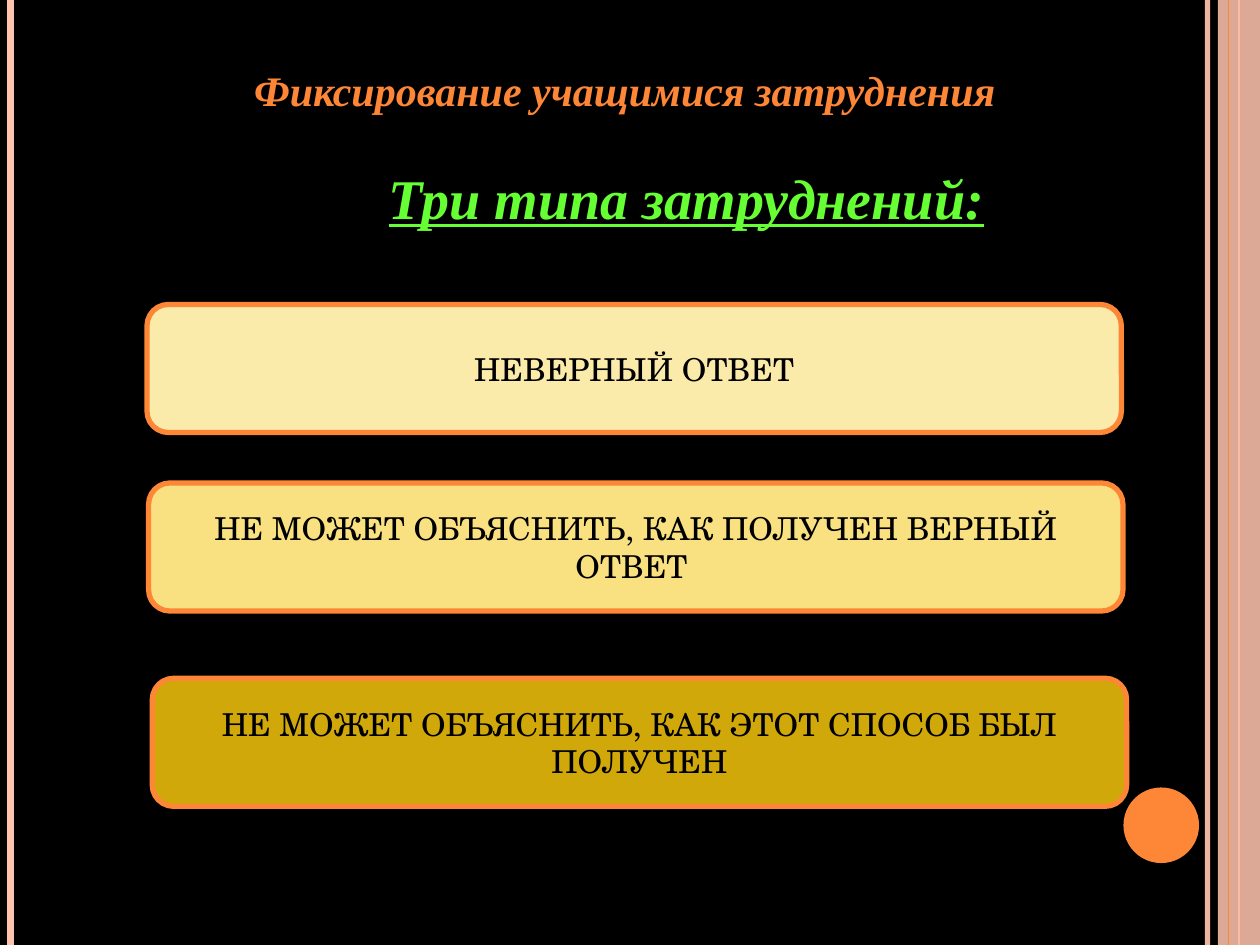
"""Build a slide that names three types of pupils' difficulties."""
import dataclasses

import lxml.etree
import pptx
import pptx.dml.color
import pptx.enum.shapes
import pptx.enum.text
import pptx.oxml.ns
import pptx.util


@dataclasses.dataclass(frozen=True)
class Theme:
    background: str = "000000"
    ink: str = "000000"
    accent: str = "FE8637"
    blush: str = "FEC3AE"
    green: str = "66FF33"
    answers: tuple = ("FBEBAB", "F9E181", "D0A80A")
    heading_font: str = "Times New Roman"
    answer_font: str = "TeX Gyre Schola"
    title_size: int = 24
    subtitle_size: int = 32
    answer_size: int = 18
    border: float = 3


class Board:
    columns, rows = 120, 90

    def __init__(self, deck, theme):
        self.theme = theme
        self.column = deck.slide_width / self.columns
        self.row = deck.slide_height / self.rows
        self.page = deck.slides.add_slide(deck.slide_layouts[6])
        self.paint(self.page.background.fill, theme.background)

    def grid(self, left, top, width, height):
        return (round(left * self.column), round(top * self.row),
                round(width * self.column), round(height * self.row))

    def paint(self, fill, color, opacity=100):
        fill.solid()
        fill.fore_color.rgb = pptx.dml.color.RGBColor.from_string(color)
        if opacity < 100:
            node = fill._xPr.find(".//" + pptx.oxml.ns.qn("a:srgbClr"))
            alpha = lxml.etree.SubElement(node, pptx.oxml.ns.qn("a:alpha"))
            alpha.set("val", str(opacity * 1000))

    def stripe(self, column, color, width, opacity=100):
        left, top, right, bottom = self.grid(column, 0, column, self.rows)
        line = self.page.shapes.add_connector(
            pptx.enum.shapes.MSO_CONNECTOR.STRAIGHT, left, top, right, bottom)
        line.line.width = pptx.util.Pt(width)
        self.paint(line.line.fill, color, opacity)
        lxml.etree.SubElement(line._element.spPr, pptx.oxml.ns.qn("a:effectLst"))

    def shape(self, kind, area, color, opacity=100):
        shape = self.page.shapes.add_shape(kind, *self.grid(*area))
        shape.shadow.inherit = False
        self.paint(shape.fill, color, opacity)
        shape.line.fill.background()
        return shape

    def label(self, box, text, font, size, color, emphasis=False, underline=False):
        box.text_frame.text = text
        para = box.text_frame.paragraphs[0]
        para.alignment = pptx.enum.text.PP_ALIGN.CENTER
        for span in para.runs:
            span.font.name = font
            span.font.size = pptx.util.Pt(size)
            span.font.bold = span.font.italic = emphasis
            span.font.underline = underline
            self.paint(span.font.fill, color)

    def heading(self, area, text, size, color, wrap=True, underline=False):
        box = self.page.shapes.add_textbox(*self.grid(*area))
        box.text_frame.word_wrap = wrap
        box.text_frame.auto_size = pptx.enum.text.MSO_AUTO_SIZE.SHAPE_TO_FIT_TEXT
        self.label(box, text, self.theme.heading_font, size, color, True, underline)

    def answer(self, left, top, text, color):
        box = self.shape(pptx.enum.shapes.MSO_SHAPE.ROUNDED_RECTANGLE,
                         (left, top, 92.8, 12.2), color)
        self.paint(box.line.fill, self.theme.accent)
        box.line.width = pptx.util.Pt(self.theme.border)
        box.text_frame.word_wrap = True
        box.text_frame.vertical_anchor = pptx.enum.text.MSO_ANCHOR.MIDDLE
        self.label(box, text, self.theme.answer_font, self.theme.answer_size,
                   self.theme.ink)


def main():
    deck = pptx.Presentation()
    deck.slide_width, deck.slide_height = pptx.util.Inches(10), pptx.util.Inches(7.5)
    theme = Theme()
    board = Board(deck, theme)
    shapes = pptx.enum.shapes.MSO_SHAPE

    board.stripe(115, theme.blush, 3, 93)
    board.stripe(1, theme.blush, 4.5)
    board.stripe(118, theme.accent, 1.5)
    board.shape(shapes.RECTANGLE, (116, 0, 4, board.rows), theme.blush, 87)
    board.stripe(117, theme.accent, 0.75)
    board.shape(shapes.OVAL, (107, 75, 7.2, 7.2), theme.accent)

    board.heading((15, 5.6, 89, 6), "Фиксирование учащимися затруднения",
                  theme.title_size, theme.accent)
    board.heading((35.6, 15, 59.6, 7.7), "Три типа затруднений:",
                  theme.subtitle_size, theme.green, wrap=False, underline=True)

    answers = (
        (14, 29, "НЕВЕРНЫЙ ОТВЕТ"),
        (14.15, 46, "НЕ МОЖЕТ ОБЪЯСНИТЬ, КАК ПОЛУЧЕН ВЕРНЫЙ ОТВЕТ "),
        (14.5, 64.6, "НЕ МОЖЕТ ОБЪЯСНИТЬ, КАК ЭТОТ СПОСОБ БЫЛ ПОЛУЧЕН"),
    )
    for (left, top, text), color in zip(answers, theme.answers):
        board.answer(left, top, text, color)

    deck.save("out.pptx")


if __name__ == "__main__":
    main()
